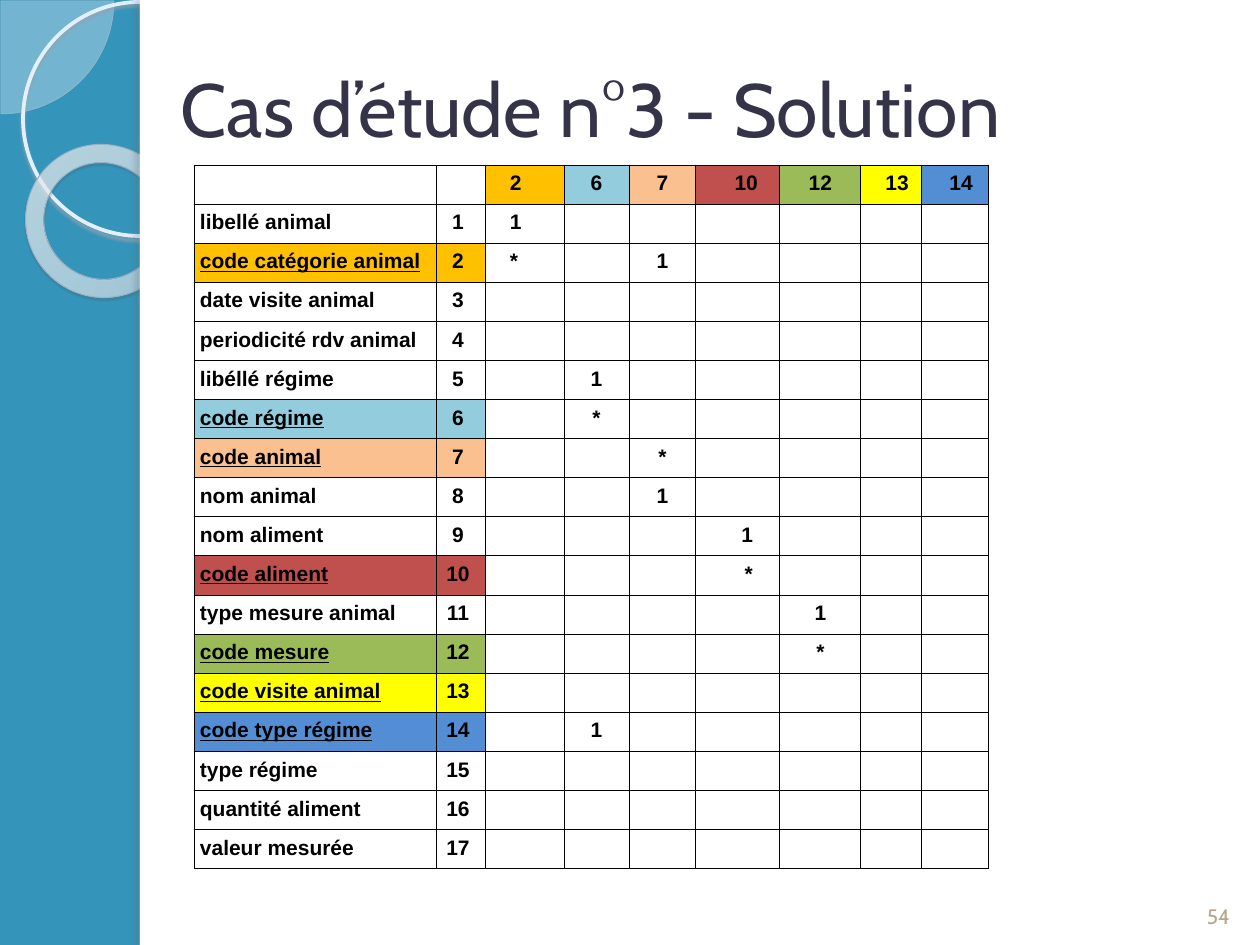
from lxml import etree
from pptx import Presentation
from pptx.dml.color import RGBColor
from pptx.enum.shapes import MSO_SHAPE as Shape
from pptx.enum.text import MSO_ANCHOR as Anchor, MSO_AUTO_SIZE as AutoSize, PP_ALIGN as Align
from pptx.oxml import parse_xml
from pptx.oxml.ns import qn
from pptx.util import Pt

EMU_PER_PX = 914400 / 126
NAMESPACE = "http://schemas.openxmlformats.org/drawingml/2006/main"

# Colour of each identifier, by its number in the dictionary
KEY_COLOURS = {2: "FFC000", 6: "93CDDD", 7: "FAC090", 10: "C0504D",
               12: "9BBB59", 13: "FFFF00", 14: "538ED5"}
ATTRIBUTES = [
    "libellé animal", "code catégorie animal", "date visite animal",
    "periodicité rdv animal", "libéllé régime", "code régime", "code animal",
    "nom animal", "nom aliment", "code aliment", "type mesure animal",
    "code mesure", "code visite animal", "code type régime", "type régime",
    "quantité aliment", "valeur mesurée",
]
# Dependencies: (attribute number, identifier number) -> mark
MARKS = {(1, 2): "1", (2, 2): "*", (2, 7): "1", (5, 6): "1", (6, 6): "*",
         (7, 7): "*", (8, 7): "1", (9, 10): "1", (10, 10): "*",
         (11, 12): "1", (12, 12): "*", (14, 6): "1"}
# Width, alignment, left and right margin of each column
COLUMNS = [
    (242, Align.LEFT, 6, 0), (49, Align.CENTER, 0, 5), (79, Align.LEFT, 25, 0),
    (65, Align.CENTER, 0, 0), (67, Align.CENTER, 0, 0), (84, Align.RIGHT, 0, 22),
    (81, Align.CENTER, 0, 0), (61, Align.RIGHT, 0, 13), (67, Align.RIGHT, 0, 16),
]


def px(value):
    return round(value * EMU_PER_PX)


def colour(value):
    return RGBColor.from_string(value)


def set_values(target, values):
    for name, value in values.items():
        setattr(target, name, value)


def add_element(parent, tag, **attributes):
    return etree.SubElement(parent, qn(f"a:{tag}"),
                            {name: str(value) for name, value in attributes.items()})


def add_colour(parent, value, opacity):
    add_element(add_element(parent, "srgbClr", val=value), "alpha", val=opacity * 1000)


def add_decoration(slide, kind, box, fill=None, line=None, width=0):
    shape = slide.shapes.add_shape(kind, *map(px, box))
    shape.shadow.inherit = False
    if fill:
        shape.fill.solid()
        shape.fill.fore_color.rgb = colour(fill)
    else:
        shape.fill.background()
    if line:
        shape.line.color.rgb = colour(line)
        shape.line.width = Pt(width)
    else:
        shape.line.fill.background()
    return shape


def add_shadow(shape, value, opacity, blur, distance, angle):
    effects = shape.element.spPr.find(qn("a:effectLst"))
    shadow = add_element(effects, "outerShdw", blurRad=Pt(blur), dist=Pt(distance),
                         dir=angle * 60000, algn="tl", rotWithShape=0)
    add_colour(shadow, value, opacity)


def set_ring_gradient(shape):
    properties = shape.element.spPr
    gradient = parse_xml(f'<a:gradFill xmlns:a="{NAMESPACE}" rotWithShape="1"/>')
    stops = add_element(gradient, "gsLst")
    for position, value, opacity in ((0, "F7FBFE", 70), (70, "FBFDFF", 55), (100, "99C4E8", 60)):
        add_colour(add_element(stops, "gs", pos=position * 1000), value, opacity)
    circle = add_element(gradient, "path", path="circle")
    add_element(circle, "fillToRect", l=-408000, t=-50000, r=508000, b=150000)
    properties.replace(properties.find(qn("a:noFill")), gradient)


def add_background(slide):
    slide.background.fill.solid()
    slide.background.fill.fore_color.rgb = colour("3494BA")

    # Corner quarter disc
    quarter = add_decoration(slide, Shape.PIE, (-112, -112, 226, 226), "F5F9FD", "A6BCCF", 0.25)
    quarter.adjustments[0] = 0
    quarter.adjustments[1] = 54
    fill_colour = quarter.element.spPr.find(qn("a:solidFill"))[0]
    add_element(fill_colour, "alpha", val=33000)

    # Circles
    circle = add_decoration(slide, Shape.OVAL, (23, 2, 234, 234), line="E0F0FF", width=2.15)
    add_shadow(circle, "94A2AF", 85, 2, 2, 90)
    ring = add_decoration(slide, Shape.DONUT, (25, 145, 155, 152), line="99B0C4", width=0.58)
    ring.adjustments[0] = 0.12
    ring.rotation = 38.6
    set_ring_gradient(ring)
    add_shadow(ring, "475159", 35, 1, 1.2, 75)

    # White page with its shaded edge
    add_decoration(slide, Shape.RECTANGLE, (140, 0, 1120, 945), "FFFFFF")
    edge = add_decoration(slide, Shape.RECTANGLE, (140, 0, 10, 945), "FFFFFF")
    add_shadow(edge, "666D73", 25, 3, 3, 180)


def write_text(frame, text, font_values, font_colour, **paragraph_values):
    paragraph = frame.paragraphs[0]
    set_values(paragraph, paragraph_values)
    if text:
        run = paragraph.add_run()
        run.text = text
        set_values(run.font, font_values)
        run.font.color.rgb = colour(font_colour)


def add_title(slide, text):
    title = slide.shapes.title
    set_values(title, {"left": px(168), "top": px(29), "width": px(1033), "height": px(157)})
    set_values(title.text_frame, {"vertical_anchor": Anchor.MIDDLE, "word_wrap": True,
                                  "auto_size": AutoSize.NONE})
    write_text(title.text_frame, text, {"name": "Cabin", "size": Pt(43)}, "353347",
               alignment=Align.LEFT)
    slide.shapes.element.append(title.element)  # in front of the white page


def add_page_number(slide, text):
    box = slide.shapes.add_textbox(px(1187), px(869), px(63), px(66))
    set_values(box.text_frame, {"vertical_anchor": Anchor.BOTTOM, "word_wrap": True})
    write_text(box.text_frame, text, {"name": "Cabin", "size": Pt(12)}, "B5A788",
               alignment=Align.CENTER)


def add_borders(cell):
    properties = cell._tc.get_or_add_tcPr()
    for index, side in enumerate("LRTB"):
        properties.insert(index, parse_xml(
            f'<a:ln{side} xmlns:a="{NAMESPACE}" w="{Pt(0.5)}"><a:solidFill>'
            f'<a:srgbClr val="000000"/></a:solidFill></a:ln{side}>'))


def format_cell(cell, text, column, fill, underline):
    _, alignment, left, right = column
    if alignment == Align.RIGHT and len(text) == 1:
        right += 5  # keeps single marks under a two-digit heading
    set_values(cell, {"margin_left": px(left), "margin_right": px(right), "margin_top": px(1),
                      "margin_bottom": 0, "vertical_anchor": Anchor.MIDDLE})
    if fill:
        cell.fill.solid()
        cell.fill.fore_color.rgb = colour(fill)
    else:
        cell.fill.background()
    add_borders(cell)
    font_values = {"name": "Arial", "size": Pt(12), "bold": True, "underline": underline}
    write_text(cell.text_frame, text, font_values, "000000",
               alignment=alignment, line_spacing=Pt(11.5))


def add_matrix(slide):
    rows = [["", "", *map(str, KEY_COLOURS)]]
    for number, name in enumerate(ATTRIBUTES, 1):
        rows.append([name, str(number), *(MARKS.get((number, key), "") for key in KEY_COLOURS)])
    width = sum(column[0] for column in COLUMNS)
    table = slide.shapes.add_table(len(rows), len(COLUMNS), px(194), px(165),
                                   px(width), px(704)).table
    set_values(table, {"first_row": False, "horz_banding": False})
    for table_column, column in zip(table.columns, COLUMNS):
        table_column.width = px(column[0])

    header_fills = [None, None, *KEY_COLOURS.values()]
    for row, texts in enumerate(rows):
        row_fill = KEY_COLOURS.get(row)
        for index, (text, column) in enumerate(zip(texts, COLUMNS)):
            fill = header_fills[index] if row == 0 else row_fill if index < 2 else None
            underline = index == 0 and row_fill is not None
            format_cell(table.cell(row, index), text, column, fill, underline)


def main():
    presentation = Presentation()
    set_values(presentation, {"slide_width": px(1260), "slide_height": px(945)})
    slide = presentation.slides.add_slide(presentation.slide_layouts[5])
    add_background(slide)
    add_title(slide, "Cas d’étude n°3 - Solution")
    add_page_number(slide, "54")
    add_matrix(slide)
    presentation.save("out.pptx")


if __name__ == "__main__":
    main()
